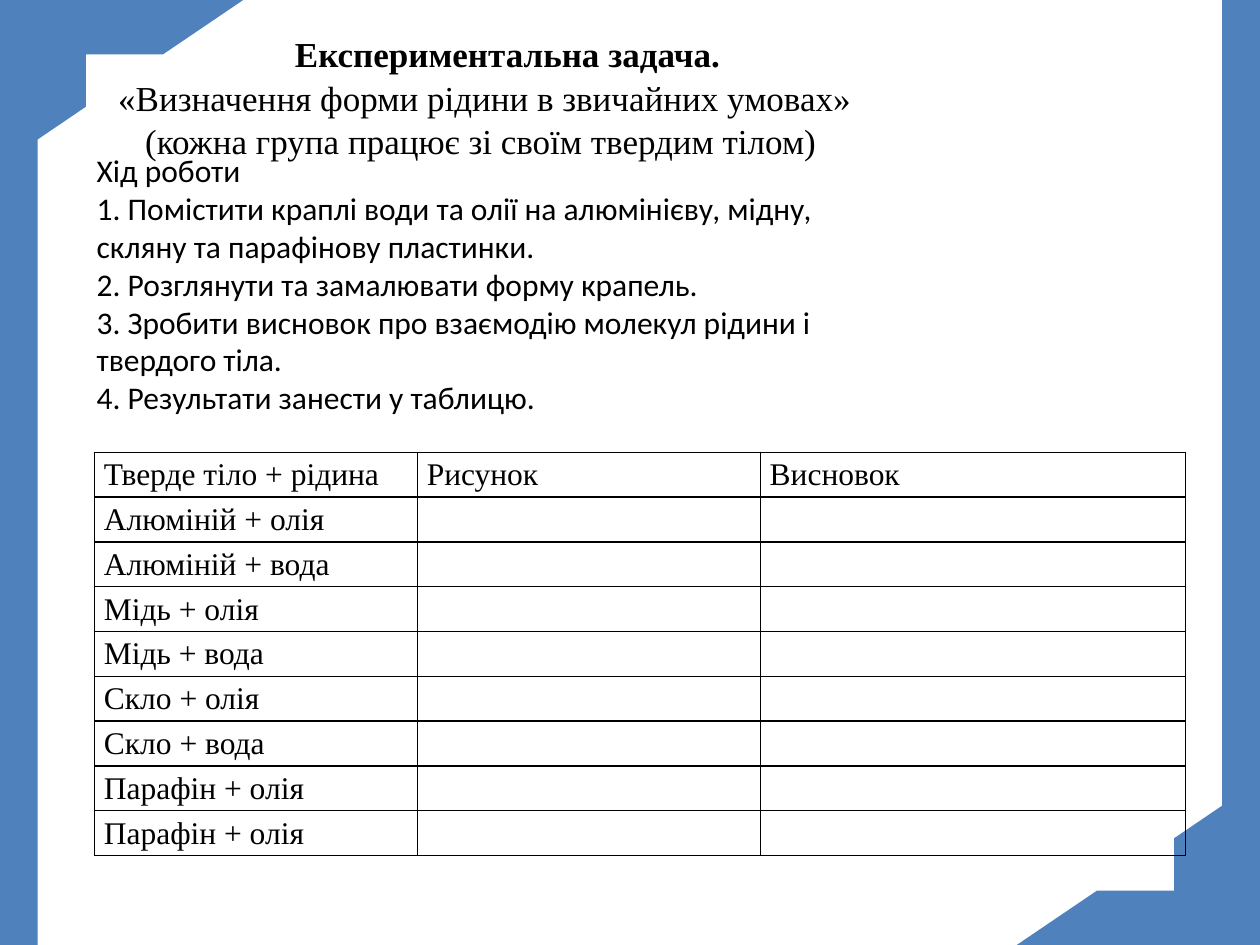
import pptx
import pptx.dml.color
import pptx.enum.shapes
import pptx.enum.text
import pptx.oxml
import pptx.oxml.ns
import pptx.util

Pt = pptx.util.Pt
MSO_SHAPE = pptx.enum.shapes.MSO_SHAPE
PP_ALIGN = pptx.enum.text.PP_ALIGN
MSO_ANCHOR = pptx.enum.text.MSO_ANCHOR

SLIDE_WIDTH, SLIDE_HEIGHT = 720, 540
COLORS = {"frame": "4F81BD", "text": "000000", "border": "000000"}
SERIF, SANS = "Times New Roman", "Calibri"

# Each title line with its first-line indent in points and its weight
TITLE_LINES = [
    ("Експериментальна задача.", 35, True),
    ("«Визначення форми рідини в звичайних умовах»", 9, False),
    ("(кожна група працює зі своїм твердим тілом)", 4.5, False),
]
STEPS = [
    "Хід роботи",
    "1. Помістити краплі води та олії на алюмінієву, мідну, скляну та парафінову пластинки.",
    "2. Розглянути та замалювати форму крапель.",
    "3. Зробити висновок про взаємодію молекул рідини і твердого тіла.",
    "4. Результати занести у таблицю.",
]
HEADERS = ["Тверде тіло + рідина", "Рисунок", "Висновок"]
SAMPLES = [
    "Алюміній + олія", "Алюміній + вода", "Мідь + олія", "Мідь + вода",
    "Скло + олія", "Скло + вода", "Парафін + олія", "Парафін + олія",
]
COLUMN_WIDTHS = [184.5, 196, 243]
ROW_HEIGHT = 25.6


def rgb(name):
    return pptx.dml.color.RGBColor.from_string(COLORS[name])


def add_run(paragraph, text, font_name, size, bold=False):
    run = paragraph.add_run()
    run.text = text
    run.font.name = font_name
    run.font.size = Pt(size)
    run.font.bold = bold
    run.font.color.rgb = rgb("text")


def add_text_frame(slide, left, top, width, height, anchor):
    box = slide.shapes.add_textbox(Pt(left), Pt(top), Pt(width), Pt(height))
    box.text_frame.word_wrap = True
    box.text_frame.vertical_anchor = anchor
    return box.text_frame


def next_paragraph(text_frame, index):
    return text_frame.add_paragraph() if index else text_frame.paragraphs[0]


def add_frame_side(slide, left, top, width, height, turned):
    """Side bar and corner; a turned side is the same design rotated by 180°."""
    bar_width, bar_top = 21.6, 59
    corner_width, corner_height = 139, 94.3
    parts = [
        (MSO_SHAPE.RECTANGLE, 0, bar_top, bar_width, height - bar_top),
        (MSO_SHAPE.HALF_FRAME, 0, 0, corner_width, corner_height),
    ]
    for kind, x, y, part_width, part_height in parts:
        if turned:
            x, y = width - x - part_width, height - y - part_height
        shape = slide.shapes.add_shape(
            kind, Pt(left + x), Pt(top + y), Pt(part_width), Pt(part_height))
        shape.rotation = 180 if turned else 0
        shape.shadow.inherit = False
        shape.fill.solid()
        shape.fill.fore_color.rgb = rgb("frame")
        shape.line.fill.background()
        if kind == MSO_SHAPE.HALF_FRAME:
            shape.adjustments[0] = 0.33
            shape.adjustments[1] = 0.52


def add_title(slide, left, top, width, height):
    text_frame = add_text_frame(slide, left, top, width, height, MSO_ANCHOR.MIDDLE)
    for index, (text, indent, bold) in enumerate(TITLE_LINES):
        paragraph = next_paragraph(text_frame, index)
        paragraph.alignment = PP_ALIGN.CENTER
        paragraph.line_spacing = 1.04
        paragraph._p.get_or_add_pPr().set("indent", str(Pt(indent)))
        add_run(paragraph, text, SERIF, 20, bold)


def add_steps(slide, left, top, width, height):
    text_frame = add_text_frame(slide, left, top, width, height, MSO_ANCHOR.TOP)
    for index, text in enumerate(STEPS):
        add_run(next_paragraph(text_frame, index), text, SANS, 18)


def add_cell_borders(cell):
    properties = cell._tc.get_or_add_tcPr()
    for side in ("lnL", "lnR", "lnT", "lnB"):
        properties.append(pptx.oxml.parse_xml(
            f'<a:{side} {pptx.oxml.ns.nsdecls("a")} w="{Pt(1)}"><a:solidFill>'
            f'<a:srgbClr val="{COLORS["border"]}"/></a:solidFill></a:{side}>'))


def add_results_table(slide, left, top):
    rows = [HEADERS] + [[sample, "", ""] for sample in SAMPLES]
    table = slide.shapes.add_table(
        len(rows), len(HEADERS), Pt(left), Pt(top),
        Pt(sum(COLUMN_WIDTHS)), Pt(ROW_HEIGHT * len(rows))).table
    table.first_row = False
    table.horz_banding = False
    for column, width in zip(table.columns, COLUMN_WIDTHS):
        column.width = Pt(width)
    for row_index, texts in enumerate(rows):
        table.rows[row_index].height = Pt(ROW_HEIGHT)
        for column_index, text in enumerate(texts):
            cell = table.cell(row_index, column_index)
            cell.margin_left = cell.margin_right = Pt(5.4)
            cell.margin_top = cell.margin_bottom = 0
            add_cell_borders(cell)
            cell.fill.background()
            if text:
                paragraph = cell.text_frame.paragraphs[0]
                paragraph.line_spacing = 1.15
                add_run(paragraph, text, SERIF, 18)


def main():
    presentation = pptx.Presentation()
    presentation.slide_width = Pt(SLIDE_WIDTH)
    presentation.slide_height = Pt(SLIDE_HEIGHT)
    slide = presentation.slides.add_slide(presentation.slide_layouts[6])

    # Decorative frame
    for turned in (False, True):
        add_frame_side(slide, 0, 0, SLIDE_WIDTH, SLIDE_HEIGHT, turned)

    # Content
    add_title(slide, 36.7, 15, 471.6, 80)
    add_results_table(slide, 54, 258.5)
    add_steps(slide, 48.2, 83, 471, 181.4)

    presentation.save("out.pptx")


if __name__ == "__main__":
    main()
